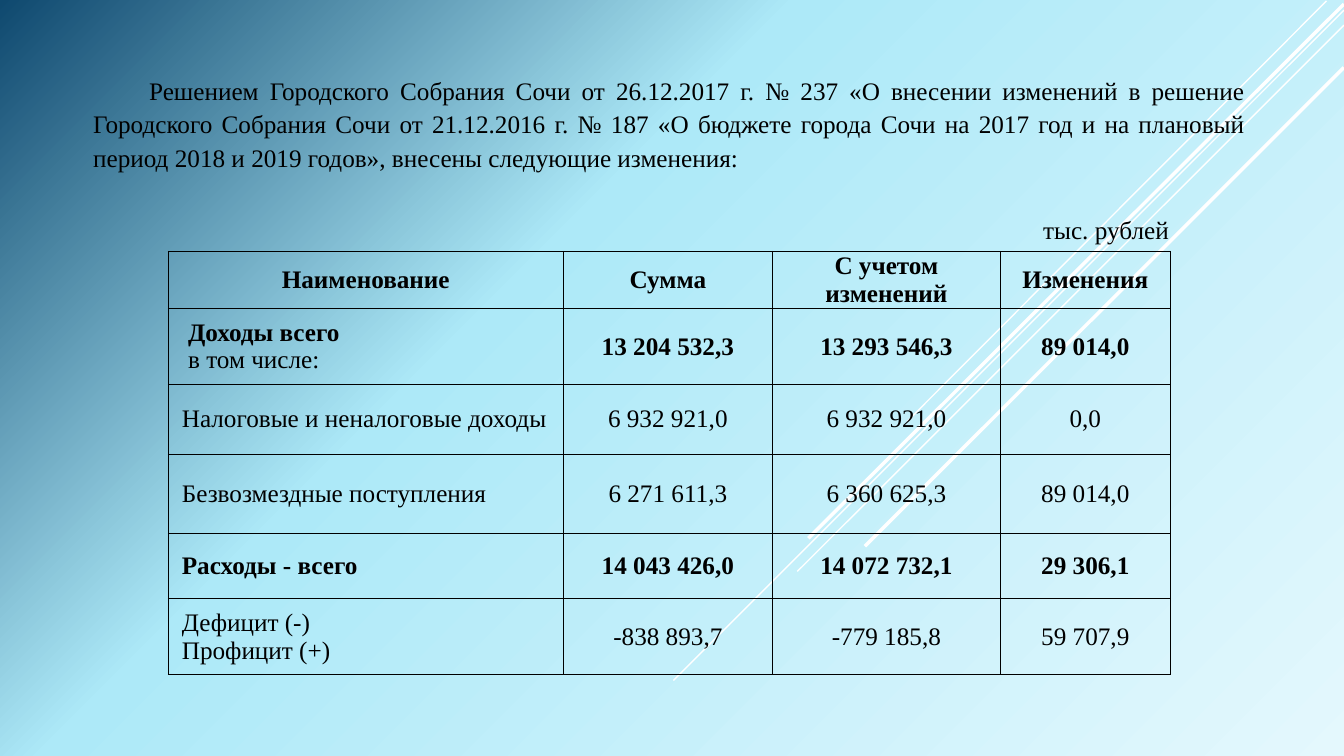
from lxml import etree
from pptx import Presentation
from pptx.dml.color import RGBColor
from pptx.enum.shapes import MSO_CONNECTOR
from pptx.enum.text import MSO_ANCHOR, PP_ALIGN
from pptx.oxml import parse_xml
from pptx.oxml.ns import nsdecls, qn
from pptx.util import Pt

COLORS = {
    "text": "000000", "border": "000000", "ray": "FFFFFF",
    "light": "E4F8FD", "sky": "ADE9F8", "deep": "0F496F",
}
FONT = "Times New Roman"
SIZE = 18

RAYS = [  # x1, y1, x2, y2, width
    (947.5, 0.7, 648, 301, 1),
    (960, 7.2, 481, 486, 1),
    (960, 18, 569.5, 408.2, 1),
    (960, 2.9, 577.4, 384.5, 2.5),
    (960, 48.2, 617.8, 390.2, 2.5),
]

INTRO = (
    "Решением Городского Собрания Сочи от 26.12.2017 г. № 237 «О внесении изменений в решение "
    "Городского Собрания Сочи от 21.12.2016 г. № 187 «О бюджете города Сочи на 2017 год и на "
    "плановый период 2018 и 2019 годов», внесены следующие изменения:"
)

COLUMN_WIDTHS = [282.2, 149.4, 162.8, 121.4]
HEADINGS = ["Наименование", "Сумма", "С учетом изменений", "Изменения"]
BUDGET = [  # height, label indent, label lines as (text, bold), amounts, amounts bold
    (54.2, 14.2, [("Доходы всего", True), ("в том числе:", False)],
     ["13 204 532,3", "13 293 546,3", "89 014,0"], True),
    (50, 9.7, [("Налоговые и неналоговые доходы", False)],
     ["6 932 921,0", "6 932 921,0", "0,0"], False),
    (56.4, 9.7, [("Безвозмездные поступления", False)],
     ["6 271 611,3", "6 360 625,3", "89 014,0"], False),
    (46.6, 9.7, [("Расходы - всего", True)],
     ["14 043 426,0", "14 072 732,1", "29 306,1"], True),
    (54.3, 9.7, [("Дефицит (-)", False), ("Профицит (+)", False)],
     ["-838 893,7", "-779 185,8", "59 707,9"], False),
]


class SlideBuilder:
    def __init__(self, slide):
        self.slide = slide

    def background(self, stops):
        """Fill the slide with a circular gradient centred on its bottom right corner."""
        self.slide.background.fill.solid()
        solid = next(self.slide.element.iter(qn("a:solidFill")))
        marks = "".join(
            f'<a:gs pos="{percent * 1000}"><a:srgbClr val="{COLORS[color]}"/></a:gs>'
            for percent, color in stops
        )
        gradient = parse_xml(
            f'<a:gradFill {nsdecls("a")} rotWithShape="1"><a:gsLst>{marks}</a:gsLst>'
            '<a:path path="circle"><a:fillToRect l="100000" t="100000"/></a:path></a:gradFill>'
        )
        solid.getparent().replace(solid, gradient)

    def line(self, x1, y1, x2, y2, width):
        ray = self.slide.shapes.add_connector(
            MSO_CONNECTOR.STRAIGHT, Pt(x1), Pt(y1), Pt(x2), Pt(y2))
        ray.line.color.rgb = RGBColor.from_string(COLORS["ray"])
        ray.line.width = Pt(width)
        etree.SubElement(ray.element.spPr, qn("a:effectLst"))

    def style(self, paragraph, align, bold=False):
        paragraph.alignment = align
        font = paragraph.font
        font.name, font.size, font.bold = FONT, Pt(SIZE), bold
        font.color.rgb = RGBColor.from_string(COLORS["text"])

    def text(self, x, y, width, height, content, align=PP_ALIGN.LEFT, indent=0, spacing=1.0):
        frame = self.slide.shapes.add_textbox(Pt(x), Pt(y), Pt(width), Pt(height)).text_frame
        frame.word_wrap = True
        paragraph = frame.paragraphs[0]
        paragraph.text = content
        paragraph.line_spacing = spacing
        self.style(paragraph, align)
        if indent:
            paragraph._p.get_or_add_pPr().set("indent", str(Pt(indent)))

    def cell(self, cell, lines, align, left=0.7):
        """Write (text, bold) lines into a table cell and outline it."""
        cell.vertical_anchor = MSO_ANCHOR.MIDDLE
        cell.margin_left, cell.margin_right = Pt(left), Pt(0.7)
        cell.margin_top, cell.margin_bottom = Pt(0.7), Pt(0)
        cell.text = "\n".join(content for content, _ in lines)
        for paragraph, (_, bold) in zip(cell.text_frame.paragraphs, lines):
            self.style(paragraph, align, bold)
        cell.fill.background()
        properties = cell._tc.get_or_add_tcPr()
        for position, side in enumerate(("lnL", "lnR", "lnT", "lnB")):
            properties.insert(position, parse_xml(
                f'<a:{side} {nsdecls("a")} w="{Pt(0.5)}"><a:solidFill>'
                f'<a:srgbClr val="{COLORS["border"]}"/></a:solidFill></a:{side}>'))

    def table(self, x, y, widths, header_height, headings, rows):
        heights = [header_height] + [row[0] for row in rows]
        table = self.slide.shapes.add_table(
            len(heights), len(widths), Pt(x), Pt(y), Pt(sum(widths)), Pt(sum(heights))).table
        table.first_row = table.horz_banding = False
        for column, width in zip(table.columns, widths):
            column.width = Pt(width)
        for row, height in zip(table.rows, heights):
            row.height = Pt(height)
        for c, heading in enumerate(headings):
            self.cell(table.cell(0, c), [(heading, True)], PP_ALIGN.CENTER)
        for r, (_, indent, label, amounts, bold) in enumerate(rows, 1):
            self.cell(table.cell(r, 0), label, PP_ALIGN.LEFT, indent)
            for c, amount in enumerate(amounts, 1):
                self.cell(table.cell(r, c), [(amount, bold)], PP_ALIGN.CENTER)


def main():
    deck = Presentation()
    deck.slide_width, deck.slide_height = Pt(960), Pt(540)
    builder = SlideBuilder(deck.slides.add_slide(deck.slide_layouts[6]))
    builder.background([(0, "light"), (62, "sky"), (100, "deep")])
    for ray in RAYS:
        builder.line(*ray)
    builder.table(120.2, 179.5, COLUMN_WIDTHS, 40, HEADINGS, BUDGET)
    builder.text(738, 149.8, 137.5, 28.8, "тыс. рублей")
    builder.text(59.5, 48.2, 837, 72.7, INTRO, PP_ALIGN.JUSTIFY, indent=40, spacing=1.1)
    deck.save("out.pptx")


if __name__ == "__main__":
    main()
